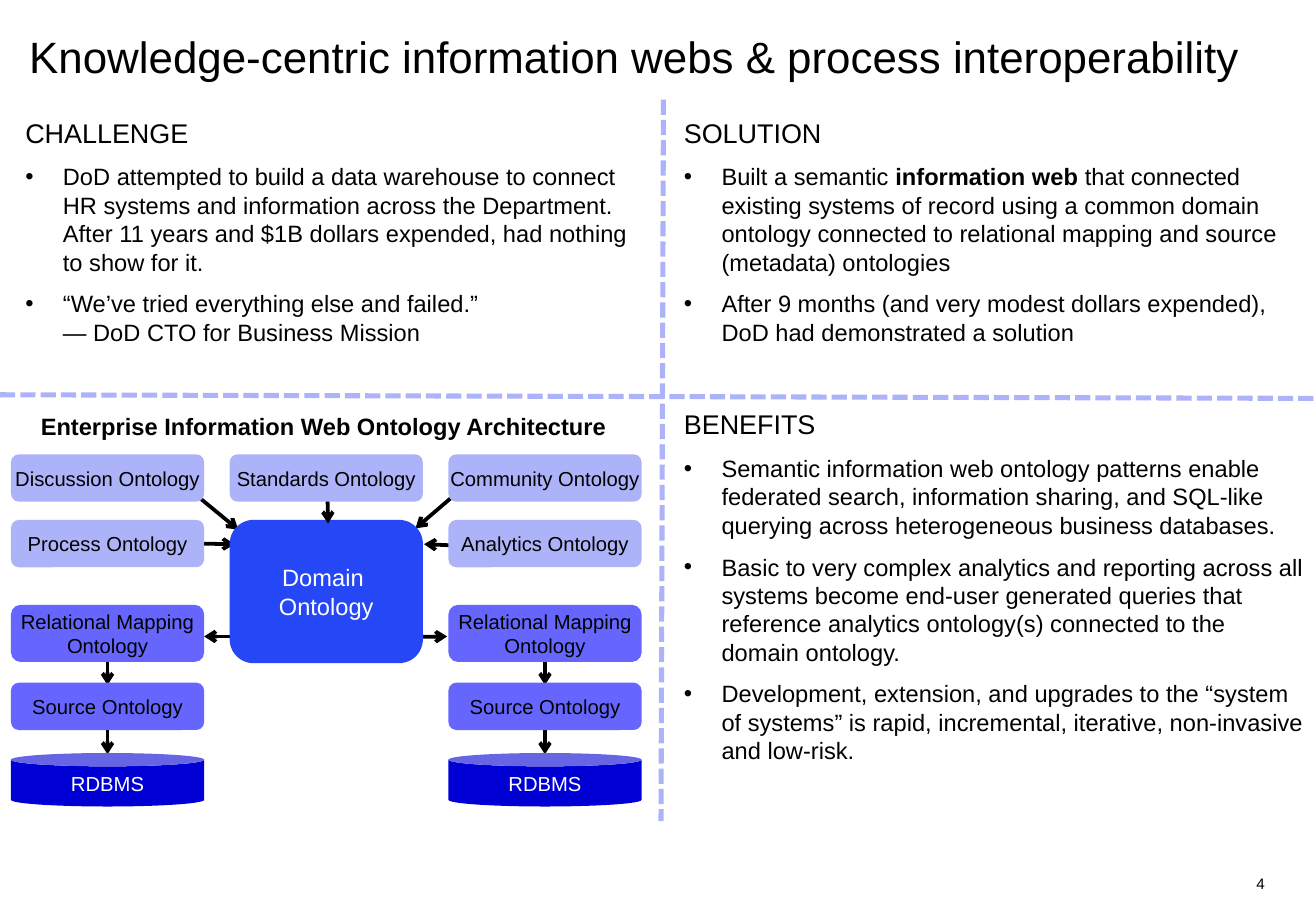
from pptx import Presentation
from pptx.dml.color import RGBColor
from pptx.enum.dml import MSO_LINE
from pptx.enum.shapes import MSO_CONNECTOR, MSO_SHAPE
from pptx.enum.text import MSO_ANCHOR, MSO_AUTO_SIZE, PP_ALIGN
from pptx.oxml.ns import qn
from pptx.util import Inches, Pt
from lxml import etree

LEFT, CENTER, RIGHT = PP_ALIGN.LEFT, PP_ALIGN.CENTER, PP_ALIGN.RIGHT
MIDDLE = MSO_ANCHOR.MIDDLE
ROUNDED, CAN = MSO_SHAPE.ROUNDED_RECTANGLE, MSO_SHAPE.CAN
DASH = MSO_LINE.SQUARE_DOT
STRAIGHT = MSO_CONNECTOR.STRAIGHT
FONT = "Arial"
COLORS = {
    "black": "000000",
    "white": "FFFFFF",
    "pale": "ADB3F9",
    "violet": "6666FF",
    "domain": "2647F6",
    "database": "0000D4",
}

WIDTH, HEIGHT = 10.83, 7.5
COLS = [0.09 + 1.8 * i for i in range(3)]
ROWS = {"top": 3.74, "second": 4.28, "mapping": 4.98, "source": 5.62, "database": 6.2}
BOX_W, BOX_H = 1.59, 0.39
TEXT_X = [0.11, 5.53]
TEXT_W = 5.3


def add_text(p, text, size, color="black", bold=False, align=LEFT):
    """Append one run per line of text, with line breaks between them."""
    p.alignment = align
    for i, line in enumerate(text.split("\n")):
        if i:
            p.add_line_break()
        r = p.add_run()
        r.text = line
        r.font.name, r.font.size, r.font.bold = FONT, Pt(size), bold
        r.font.color.rgb = RGBColor.from_string(COLORS[color])


def add_line(x1, y1, x2, y2, color="black", width=2.25, dashed=False):
    """Draw a dashed divider, or else an arrow pointing at the second end."""
    line = s.shapes.add_connector(STRAIGHT, Inches(x1), Inches(y1), Inches(x2), Inches(y2))
    line.line.color.rgb = RGBColor.from_string(COLORS[color])
    line.line.width = Pt(width)
    if dashed:
        line.line.dash_style = DASH
    else:
        ln = line.line._get_or_add_ln()
        etree.SubElement(ln, qn("a:tailEnd"), type="arrow")
    etree.SubElement(line._element.spPr, qn("a:effectLst"))


prs = Presentation()
prs.slide_width, prs.slide_height = Inches(WIDTH), Inches(HEIGHT)
s = prs.slides.add_slide(prs.slide_layouts[5])

# Title
title = s.shapes.title
title.left, title.top, title.width, title.height = map(Inches, (0.14, 0.19, 10.25, 0.54))
tf = title.text_frame
tf.auto_size = MSO_AUTO_SIZE.NONE
tf.word_wrap = False
tf.vertical_anchor = MSO_ANCHOR.TOP
add_text(tf.paragraphs[0], "Knowledge-centric information webs & process interoperability", 26)

# Quadrant dividers
add_line(0, 3.25, WIDTH, 3.28, "pale", 3, dashed=True)
add_line(5.46, 0.82, 5.44, 6.76, "pale", 3, dashed=True)

# Arrows of the ontology diagram
arrows = [
    (1.24, 4.47, 1.93, 4.48),
    (3.96, 4.5, 3.49, 4.48),
    (1.62, 4.08, 1.96, 4.36),
    (3.77, 4.05, 3.42, 4.35),
    (2.2, 5.24, 1.68, 5.24),
    (3.09, 5.25, 3.68, 5.24),
]
for col in (COLS[0], COLS[2]):
    center = col + BOX_W / 2
    arrows += [(center, y, center, y + 0.45) for y in (5.19, 5.76)]
for arrow in arrows:
    add_line(*arrow)

# Boxes: label, shape, column, row, height, fill, text colour, text size
boxes = [
    ("Domain \nOntology", ROUNDED, 1, "second", 1.18, "domain", "white", 14),
    ("Discussion Ontology", ROUNDED, 0, "top", BOX_H, "pale", "black", 12),
    ("Standards Ontology", ROUNDED, 1, "top", BOX_H, "pale", "black", 12),
    ("Community Ontology", ROUNDED, 2, "top", BOX_H, "pale", "black", 12),
    ("Process Ontology", ROUNDED, 0, "second", BOX_H, "pale", "black", 12),
    ("Analytics Ontology", ROUNDED, 2, "second", BOX_H, "pale", "black", 12),
]
for col in (0, 2):
    boxes += [
        ("Relational Mapping\nOntology", ROUNDED, col, "mapping", 0.47, "violet", "black", 12),
        ("Source Ontology", ROUNDED, col, "source", BOX_H, "violet", "black", 12),
        ("RDBMS", CAN, col, "database", 0.44, "database", "white", 12),
    ]
for label, kind, col, row, height, fill, color, size in boxes:
    if label == "Standards Ontology":  # its arrow lies over the domain box
        add_line(2.69, 3.86, 2.7, 4.31)
    sp = s.shapes.add_shape(kind, Inches(COLS[col]), Inches(ROWS[row]), Inches(BOX_W), Inches(height))
    sp.shadow.inherit = False
    sp.fill.solid()
    sp.fill.fore_color.rgb = RGBColor.from_string(COLORS[fill])
    sp.line.fill.background()
    tf = sp.text_frame
    tf.word_wrap = False
    tf.vertical_anchor = MIDDLE
    tf.margin_left = tf.margin_right = tf.margin_top = tf.margin_bottom = Inches(0.05)
    for i, line in enumerate(label.split("\n")):
        p = tf.add_paragraph() if i else tf.paragraphs[0]
        add_text(p, line, size, color, align=CENTER)

# Diagram heading
heading = s.shapes.add_textbox(Inches(TEXT_X[0]), Inches(3.34), Inches(5.11), Inches(0.36))
heading.text_frame.word_wrap = True
add_text(heading.text_frame.paragraphs[0], "Enterprise Information Web Ontology Architecture",
         14, bold=True, align=CENTER)

# Text quadrants: each bullet is a list of runs, every second run bold
quadrants = [
    ("CHALLENGE", 0, 0.91, 2.01, [
        ["DoD attempted to build a data warehouse to connect HR systems and information across "
         "the Department. After 11 years and $1B dollars expended, had nothing to show for it."],
        ["“We’ve tried everything else and failed.”\n— DoD CTO for Business Mission"],
    ]),
    ("SOLUTION", 1, 0.91, 2.01, [
        ["Built a semantic ", "information web ",
         "that connected existing systems of record using a common domain ontology connected "
         "to relational mapping and source (metadata) ontologies"],
        ["After 9 months (and very modest dollars expended), DoD had demonstrated a solution"],
    ]),
    ("BENEFITS", 1, 3.31, 3.06, [
        ["Semantic information web ontology patterns enable federated search, information "
         "sharing, and SQL-like querying across heterogeneous business databases."],
        ["Basic to very complex analytics and reporting across all systems become end-user "
         "generated queries that reference analytics ontology(s) connected to the domain ontology."],
        ["Development, extension, and upgrades to the “system of systems” is rapid, "
         "incremental, iterative, non-invasive and low-risk."],
    ]),
]
for name, col, top, height, bullets in quadrants:
    box = s.shapes.add_textbox(Inches(TEXT_X[col]), Inches(top), Inches(TEXT_W), Inches(height))
    tf = box.text_frame
    tf.word_wrap = True
    add_text(tf.paragraphs[0], name, 16)
    for runs in bullets:
        p = tf.add_paragraph()
        p.space_before = Pt(8)
        pPr = p._p.get_or_add_pPr()
        pPr.set("marL", str(Inches(0.31)))
        pPr.set("indent", str(-Inches(0.31)))
        etree.SubElement(pPr, qn("a:buFont"), typeface=FONT)
        etree.SubElement(pPr, qn("a:buChar"), char="•")
        for i, text in enumerate(runs):
            add_text(p, text, 14, bold=i % 2 == 1)

# Page number
number = s.shapes.add_textbox(Inches(10.26), Inches(7.2), Inches(0.15), Inches(0.15))
tf = number.text_frame
tf.word_wrap = False
tf.margin_left = tf.margin_right = tf.margin_top = tf.margin_bottom = 0
add_text(tf.paragraphs[0], "4", 9, align=RIGHT)

prs.save("out.pptx")
